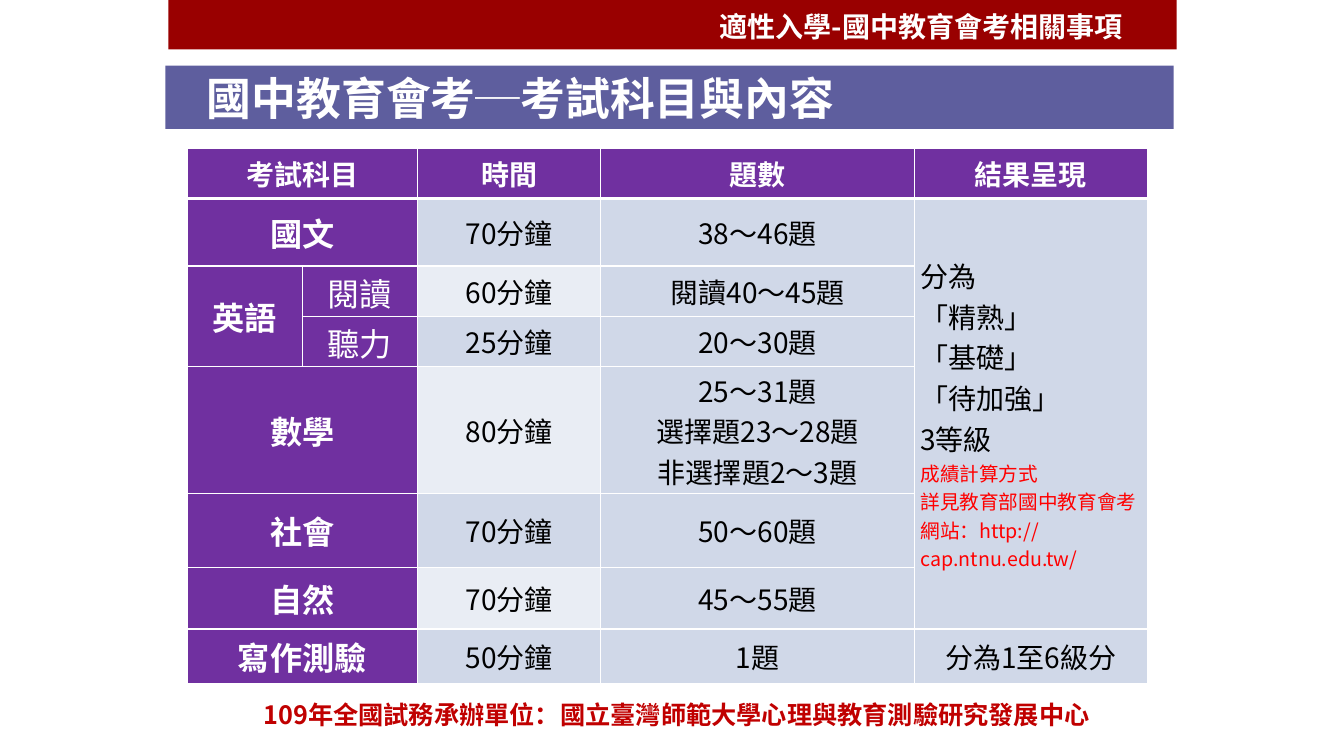
import pptx
import pptx.dml.color
import pptx.enum.shapes
import pptx.enum.text
import pptx.oxml
import pptx.oxml.ns
import pptx.util
from lxml import etree

Inches, Pt = pptx.util.Inches, pptx.util.Pt
ALIGN, ANCHOR = pptx.enum.text.PP_ALIGN, pptx.enum.text.MSO_ANCHOR
qn = pptx.oxml.ns.qn

FONT = "Noto Sans CJK SC"
WHITE, BLACK, RED, PURPLE = "FFFFFF", "000000", "FF0000", "7030A0"
PALE, PALER = "D0D8E8", "E9EDF4"

SECTION = "適性入學-國中教育會考相關事項"
TITLE = "國中教育會考─考試科目與內容"
FOOTER = "109年全國試務承辦單位：國立臺灣師範大學心理與教育測驗研究發展中心"

COLS = [1.14, 1.14, 1.82, 3.11, 2.31]
ROWS = [0.5, 0.67, 0.5, 0.5, 1.26, 0.73, 0.61, 0.54]
# subject, part, time, questions, result; None is covered by a merged cell
CELLS = [
    ["考試科目", None, "時間", "題數", "結果呈現"],
    ["國文", None, "70分鐘", "38～46題", "分為\n「精熟」\n「基礎」\n「待加強」\n3等級"],
    ["英語", "閱讀", "60分鐘", "閱讀40～45題", None],
    [None, "聽力", "25分鐘", "20～30題", None],
    ["數學", None, "80分鐘", "25～31題\n選擇題23～28題\n非選擇題2～3題", None],
    ["社會", None, "70分鐘", "50～60題", None],
    ["自然", None, "70分鐘", "45～55題", None],
    ["寫作測驗", None, "50分鐘", "1題", "分為1至6級分"],
]
SCORING = "成績計算方式\n詳見教育部國中教育會考網站：http://cap.ntnu.edu.tw/"
MERGES = [((r, 0), (r, 1)) for r in (0, 1, 4, 5, 6, 7)]
MERGES += [((2, 0), (3, 0)), ((1, 4), (6, 4))]
RESULT = (1, 4)
PALER_TIMES = (2, 4, 6)

HEAD = {"size": Pt(20), "bold": True, "color": WHITE}
SUBJECT = {"size": Pt(23), "bold": True, "color": WHITE}
PART = {"size": Pt(23), "bold": False, "color": WHITE}
BODY = {"size": Pt(20), "bold": False, "color": BLACK}
NOTE = {"size": Pt(14), "bold": False, "color": RED}


def rgb(value):
    return pptx.dml.color.RGBColor.from_string(value)


def fill(obj, color):
    obj.fill.solid()
    obj.fill.fore_color.rgb = rgb(color)


def write(tf, text, style, align=ALIGN.LEFT, more=False):
    """Put one paragraph per line into tf, after its present text if more."""
    for i, line in enumerate(text.split("\n")):
        p = tf.add_paragraph() if i or more else tf.paragraphs[0]
        p.alignment = align
        r = p.add_run()
        r.text = line
        for name, value in style.items():
            if name == "color":
                r.font.color.rgb = rgb(value)
            else:
                setattr(r.font, name, value)
        r.font.name = FONT
        etree.SubElement(r.font._element, qn("a:ea"), typeface=FONT)


def add_text(slide, box, text, style, align=ALIGN.LEFT):
    tf = slide.shapes.add_textbox(*map(Inches, box)).text_frame
    tf.word_wrap = True
    tf.auto_size = pptx.enum.text.MSO_AUTO_SIZE.SHAPE_TO_FIT_TEXT
    write(tf, text, style, align)


def set_borders(cell, widths):
    """Draw white left, right, top and bottom borders, widths in points."""
    tc_pr = cell._tc.get_or_add_tcPr()
    for i, (side, width) in enumerate(zip("LRTB", widths)):
        ln = etree.Element(qn("a:ln" + side), w=str(Pt(width)))
        solid = etree.SubElement(ln, qn("a:solidFill"))
        etree.SubElement(solid, qn("a:srgbClr"), val=WHITE)
        tc_pr.insert(i, ln)


def cell_look(r, c):
    if r == 0:
        return HEAD, PURPLE
    if c < 2:
        return (PART if c else SUBJECT), PURPLE
    return BODY, (PALER if c == 2 and r in PALER_TIMES else PALE)


def add_title(slide):
    title = slide.shapes.title
    title.left, title.top, title.width, title.height = map(Inches, (1.64, 0.65, 10, 0.63))
    fill(title, "000066")
    color = title.fill._xPr.find(qn("a:solidFill"))[0]
    etree.SubElement(color, qn("a:alpha"), val="63000")
    tf = title.text_frame
    tf.auto_size = pptx.enum.text.MSO_AUTO_SIZE.NONE
    tf.vertical_anchor = ANCHOR.MIDDLE
    tf.margin_left = Inches(0.41)
    write(tf, TITLE, {"size": Pt(32), "bold": True, "color": WHITE})


def add_exam_table(slide):
    box = map(Inches, (1.86, 1.47, sum(COLS), sum(ROWS)))
    table = slide.shapes.add_table(len(ROWS), len(COLS), *box).table
    for col, width in zip(table.columns, COLS):
        col.width = Inches(width)
    for row, height in zip(table.rows, ROWS):
        row.height = Inches(height)
    for first, last in MERGES:
        table.cell(*first).merge(table.cell(*last))
    for r, texts in enumerate(CELLS):
        for c, text in enumerate(texts):
            cell = table.cell(r, c)
            style, color = cell_look(r, c)
            fill(cell, color)
            set_borders(cell, (1, 1, 3 if r == 1 else 1, 3 if r == 0 else 1))
            cell.vertical_anchor = ANCHOR.MIDDLE
            side, end = (0, 0) if c == 3 else (0.06, 0.03)
            cell.margin_left = cell.margin_right = Inches(side)
            cell.margin_top = cell.margin_bottom = Inches(end)
            if text:
                align = ALIGN.LEFT if (r, c) == RESULT else ALIGN.CENTER
                write(cell.text_frame, text, style, align)
    write(table.cell(*RESULT).text_frame, SCORING, NOTE, more=True)


def main():
    prs = pptx.Presentation()
    prs.slide_width, prs.slide_height = Inches(13.33), Inches(7.5)
    slide = prs.slides.add_slide(prs.slide_layouts[5])
    banner = slide.shapes.add_shape(
        pptx.enum.shapes.MSO_SHAPE.RECTANGLE, *map(Inches, (1.67, 0, 10, 0.49)))
    banner.shadow.inherit = False
    fill(banner, "990000")
    banner.line.fill.background()
    add_text(slide, (7.04, 0.05, 4.43, 0.44), SECTION, HEAD)
    add_title(slide)
    add_exam_table(slide)
    add_text(slide, (1.88, 6.89, 9.66, 0.4), FOOTER,
             {"size": Pt(18), "bold": True, "color": "C00000"}, ALIGN.CENTER)
    prs.save("out.pptx")


if __name__ == "__main__":
    main()
